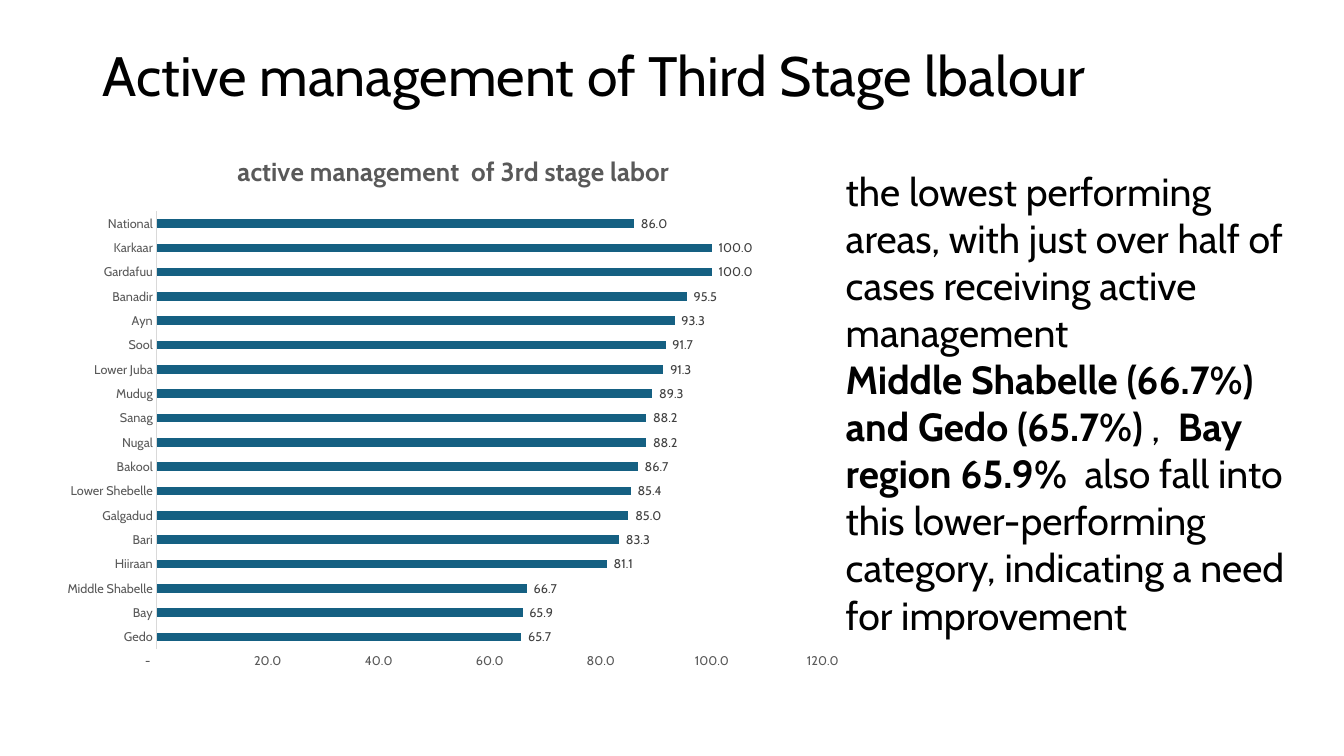
from lxml import etree
from pptx import Presentation
from pptx.chart.data import CategoryChartData
from pptx.dml.color import RGBColor
from pptx.enum.chart import XL_CHART_TYPE, XL_LABEL_POSITION, XL_TICK_MARK
from pptx.enum.text import MSO_ANCHOR
from pptx.util import Inches, Pt

BAR = XL_CHART_TYPE.BAR_CLUSTERED
OUT_END = XL_LABEL_POSITION.OUTSIDE_END
NO_TICK = XL_TICK_MARK.NONE
MIDDLE = MSO_ANCHOR.MIDDLE

FACE = "Cabin"
NUM = '_-* #,##0.0_-;\\-* #,##0.0_-;_-* "-"??_-;'
COLORS = {"text": "000000", "bar": "156082", "axis": "595959",
          "label": "404040", "line": "D9D9D9"}


def color(name):
    return RGBColor.from_string(COLORS[name])


def style(font, size, name, bold=False):
    for key, value in {"name": FACE, "size": Pt(size), "bold": bold}.items():
        setattr(font, key, value)
    font.color.rgb = color(name)


deck = Presentation()
deck.slide_width, deck.slide_height = Inches(13.33), Inches(7.5)
slide = deck.slides.add_slide(deck.slide_layouts[6])

# Title
box = slide.shapes.add_textbox(*map(Inches, (0.92, 0.4, 11.5, 0.76)))
frame = box.text_frame
frame.word_wrap = True
frame.vertical_anchor = MIDDLE
head = frame.paragraphs[0]
head.line_spacing = 0.9
run = head.add_run()
run.text = "Active management of Third Stage lbalour"
style(run.font, 39.6, "text")

# Chart of regions, lowest bar first
rates = [
    ("Gedo", 65.7), ("Bay", 65.9), ("Middle Shabelle", 66.7),
    ("Hiiraan", 81.1), ("Bari", 83.3), ("Galgadud", 85),
    ("Lower Shebelle", 85.4), ("Bakool", 86.7), ("Nugal", 88.2),
    ("Sanag", 88.2), ("Mudug", 89.3), ("Lower Juba", 91.3),
    ("Sool", 91.7), ("Ayn", 93.3), ("Banadir", 95.5),
    ("Gardafuu", 100), ("Karkaar", 100), ("National", 86),
]
data = CategoryChartData(number_format=NUM)
data.categories = [area for area, rate in rates]
data.add_series("Series 1", [rate for area, rate in rates])
chart = slide.shapes.add_chart(
    BAR, *map(Inches, (0.52, 1.31, 7.96, 5.43)), data).chart
style(chart.font, 10, "text")
chart.has_legend = False
chart.has_title = True
run = chart.chart_title.text_frame.paragraphs[0].add_run()
run.text = "active management  of 3rd stage labor"
style(run.font, 18.6, "axis", True)

for axis in (chart.category_axis, chart.value_axis):
    axis.major_tick_mark = axis.minor_tick_mark = NO_TICK
    axis.has_major_gridlines = False
    style(axis.tick_labels.font, 9, "axis")
edge = chart.category_axis.format.line
edge.color.rgb = color("line")
edge.width = Pt(0.75)
scale = chart.value_axis
scale.format.line.fill.background()
for key, value in {"minimum_scale": 0, "maximum_scale": 120, "major_unit": 20}.items():
    setattr(scale, key, value)

plot = chart.plots[0]
plot.gap_width = 182
plot.vary_by_categories = False
fill = plot.series[0].format.fill
fill.solid()
fill.fore_color.rgb = color("bar")
plot.has_data_labels = True
labels = plot.data_labels
labels.show_value = True
labels.position = OUT_END
style(labels.font, 9, "label")
for part in (scale.tick_labels, labels):
    part.number_format = NUM
    part.number_format_is_linked = False

# Place of the plot, as shares of the chart
ns = "{http://schemas.openxmlformats.org/drawingml/2006/chart}"
area = chart.element.find(f".//{ns}plotArea")
for old in area.findall(f"{ns}layout"):
    area.remove(old)
layout = etree.Element(f"{ns}layout")
area.insert(0, layout)
place = etree.SubElement(layout, f"{ns}manualLayout")
for tag, val in {"layoutTarget": "inner", "xMode": "edge", "yMode": "edge",
                 "x": 0.13, "y": 0.145, "w": 0.83, "h": 0.8}.items():
    etree.SubElement(place, ns + tag).set("val", str(val))

# Findings
notes = [
    [("the lowest performing areas, with just over half of cases "
      "receiving active management", False)],
    [("Middle Shabelle (66.7%) and Gedo (65.7%)", True), (" ,  ", False),
     ("Bay region 65.9%  ", True),
     ("also fall into this lower-performing category, indicating a need "
      "for improvement", False)],
]
box = slide.shapes.add_textbox(*map(Inches, (8.29, 1.61, 4.6, 5.28)))
frame = box.text_frame
frame.word_wrap = True
for i, parts in enumerate(notes):
    para = frame.add_paragraph() if i else frame.paragraphs[0]
    for text, bold in parts:
        run = para.add_run()
        run.text = text
        style(run.font, 28, "text", bold)

deck.save("out.pptx")
